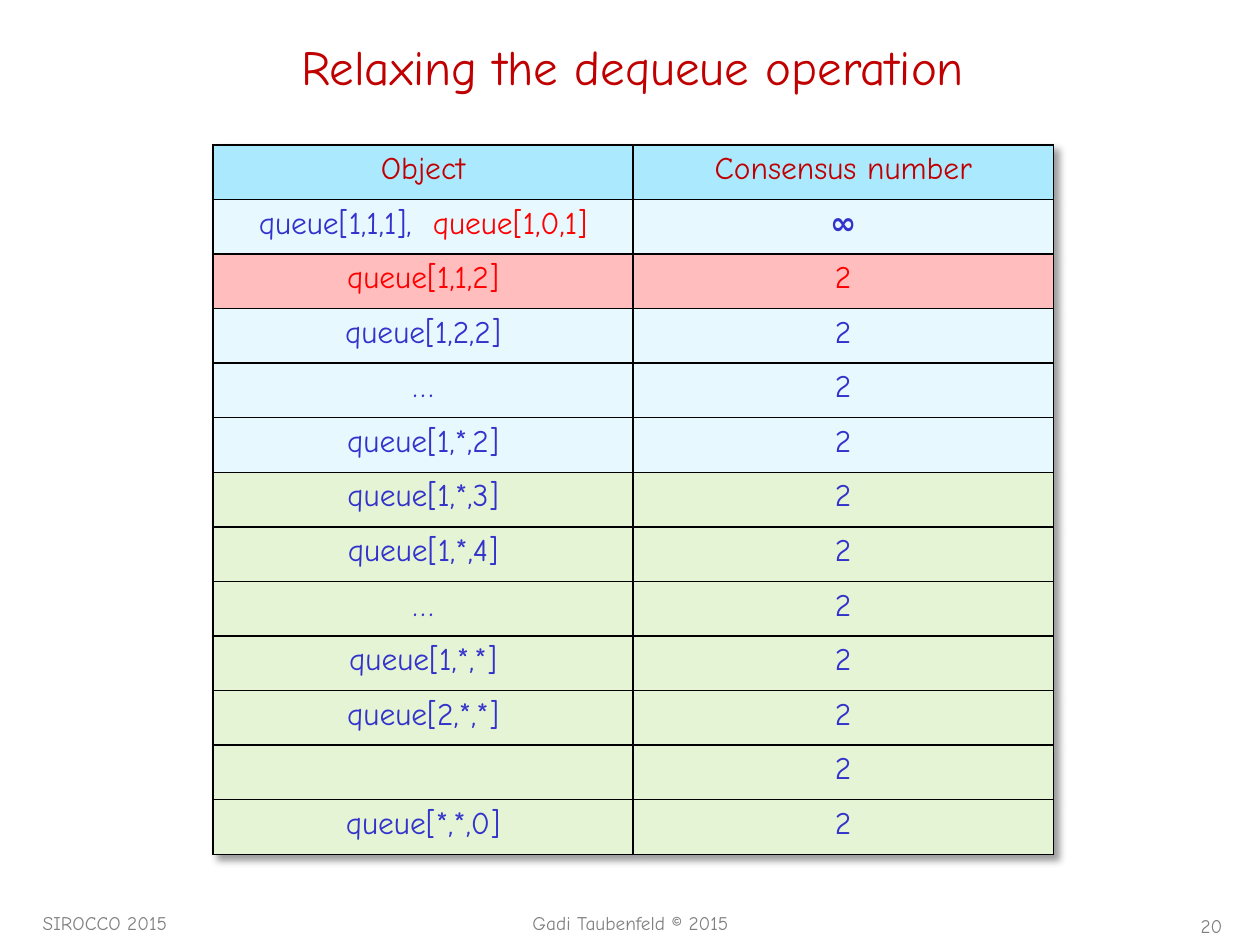
from lxml.etree import SubElement
from pptx import Presentation
from pptx.dml.color import RGBColor
from pptx.enum.text import MSO_ANCHOR, PP_ALIGN
from pptx.oxml import parse_xml
from pptx.oxml.ns import nsdecls, qn
from pptx.util import Inches, Pt

FONT = "Comic Neue"
COLORS = {
    "title": "C00000", "blue": "3333CC", "red": "FF0000", "gray": "808080",
    "border": "000000", "header": "ABE9FF", "sky": "E7F9FF",
    "pink": "FFBDBD", "green": "E5F4D4",
}
# Fill, text colour, object, consensus number
ROWS = [
    ("header", "title", "Object", "Consensus number"),
    ("sky", "blue", "queue[1,1,1],  ", "∞"),
    ("pink", "red", "queue[1,1,2]", "2"),
    ("sky", "blue", "queue[1,2,2]", "2"),
    ("sky", "blue", "…", "2"),
    ("sky", "blue", "queue[1,*,2]", "2"),
    ("green", "blue", "queue[1,*,3]", "2"),
    ("green", "blue", "queue[1,*,4]", "2"),
    ("green", "blue", "…", "2"),
    ("green", "blue", "queue[1,*,*]", "2"),
    ("green", "blue", "queue[2,*,*]", "2"),
    ("green", "blue", "", "2"),
    ("green", "blue", "queue[*,*,0]", "2"),
]


def add_text(para, text, size=18, color="blue", bold=False, align=PP_ALIGN.CENTER):
    para.alignment = align
    span = para.add_run()
    span.text = text
    span.font.name = FONT
    span.font.size = Pt(size)
    span.font.bold = bold
    span.font.color.rgb = RGBColor.from_string(COLORS[color])
    return span


def soft_shadow():
    return parse_xml(
        f'<a:effectLst {nsdecls("a")}><a:outerShdw blurRad="50800" dist="50800" '
        'dir="2700000" algn="tl" rotWithShape="0"><a:srgbClr val="000000">'
        '<a:alpha val="40000"/></a:srgbClr></a:outerShdw></a:effectLst>'
    )


def fill_title(page, left, top, width, height):
    title = page.shapes.title
    title.left, title.top, title.width, title.height = left, top, width, height
    title.text_frame.vertical_anchor = MSO_ANCHOR.MIDDLE
    span = add_text(title.text_frame.paragraphs[0], "Relaxing the dequeue operation",
                    size=28, color="title")
    span.font.fill._xPr.find(qn("a:solidFill")).addnext(soft_shadow())


def format_cell(cell, fill):
    properties = cell._tc.get_or_add_tcPr()
    for side in ("lnL", "lnR", "lnT", "lnB"):
        line = SubElement(properties, qn(f"a:{side}"), w=str(Pt(1)))
        paint = SubElement(line, qn("a:solidFill"))
        SubElement(paint, qn("a:srgbClr"), val=COLORS["border"])
    cell.fill.solid()
    cell.fill.fore_color.rgb = RGBColor.from_string(COLORS[fill])


def add_consensus_table(page, left, top, width, height):
    table = page.shapes.add_table(len(ROWS), 2, left, top, width, height).table
    table.first_row = table.horz_banding = False
    table._tbl.tblPr.insert(0, soft_shadow())
    for row, (fill, color, *texts) in enumerate(ROWS):
        for column, text in enumerate(texts):
            cell = table.cell(row, column)
            format_cell(cell, fill)
            if text:
                add_text(cell.text_frame.paragraphs[0], text, color=color, bold=text == "∞")
    add_text(table.cell(1, 0).text_frame.paragraphs[0], "queue[1,0,1]", color="red")


def add_footer(page, text, left, top, width, height, align):
    box = page.shapes.add_textbox(left, top, width, height)
    box.text_frame.word_wrap = True
    add_text(box.text_frame.paragraphs[0], text, size=11, color="gray", align=align)


def main():
    deck = Presentation()
    deck.slide_width, deck.slide_height = Inches(10), Inches(7.5)
    page = deck.slides.add_slide(deck.slide_layouts[5])
    fill_title(page, Inches(0.27), Inches(0.13), Inches(9.5), Inches(0.79))
    add_consensus_table(page, Inches(1.69), Inches(1.15), Inches(6.67), Inches(5.63))
    for text, left, top, width, align in (
        ("SIROCCO 2015", 0.24, 7.18, 2.08, PP_ALIGN.LEFT),
        ("Gadi Taubenfeld © 2015", 3.98, 7.18, 2.05, PP_ALIGN.CENTER),
        ("20", 9.33, 7.21, 0.47, PP_ALIGN.RIGHT),
    ):
        add_footer(page, text, Inches(left), Inches(top), Inches(width), Inches(0.27), align)
    deck.save("out.pptx")


if __name__ == "__main__":
    main()
